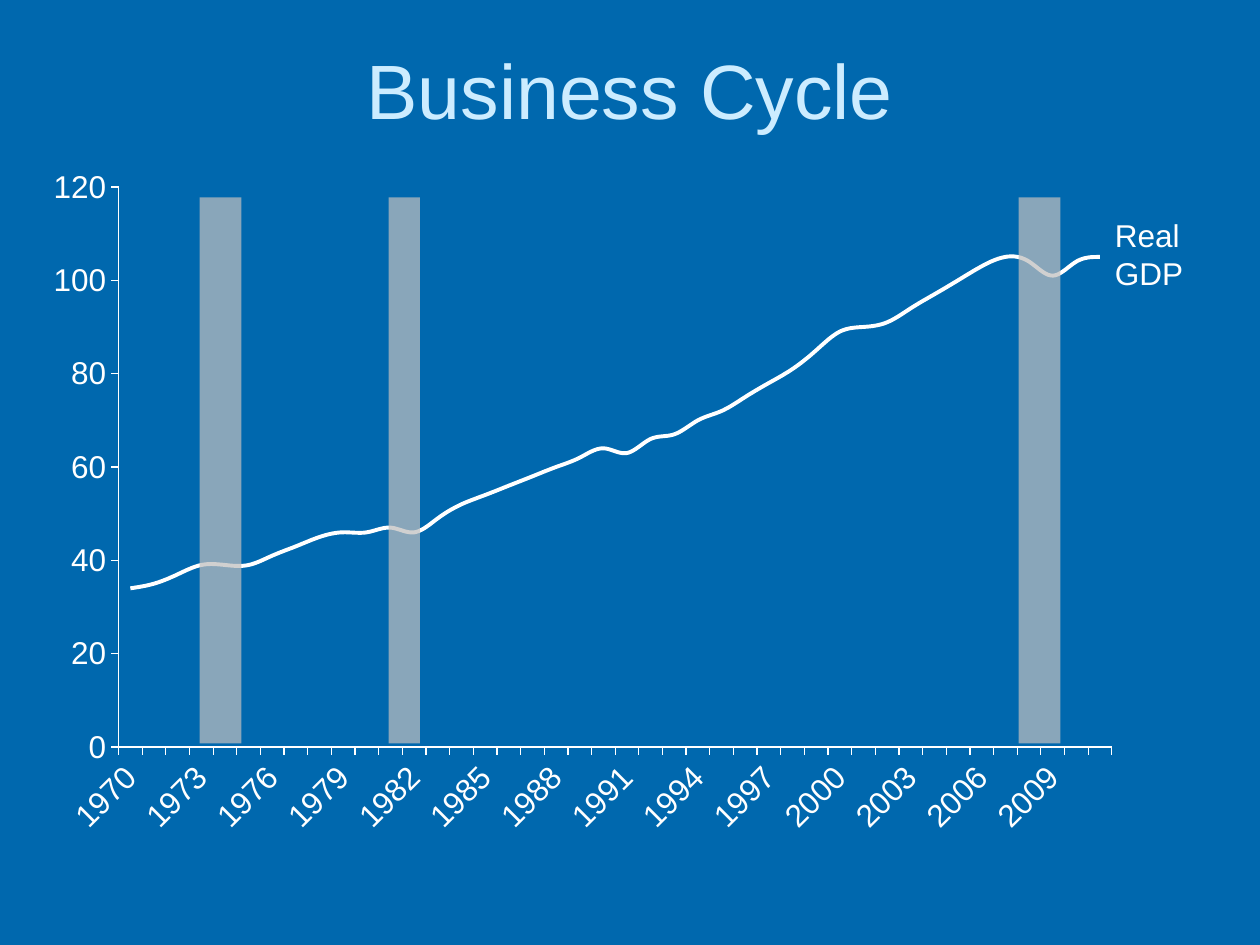
from lxml.etree import SubElement
from pptx import Presentation
from pptx.chart.data import CategoryChartData
from pptx.dml.color import RGBColor
from pptx.enum.chart import XL_CHART_TYPE, XL_MARKER_STYLE, XL_TICK_MARK
from pptx.enum.shapes import MSO_SHAPE
from pptx.enum.text import MSO_ANCHOR, PP_ALIGN
from pptx.oxml import parse_xml
from pptx.oxml.ns import nsdecls, qn
from pptx.util import Pt

FIRST_YEAR = 1970
REAL_GDP = [34, 35, 37, 39, 39, 39, 41, 43, 45, 46, 46, 47, 46, 49,
            52, 54, 56, 58, 60, 62, 64, 63, 66, 67, 70, 72, 75, 78,
            81, 85, 89, 90, 91, 94, 97, 100, 103, 105, 104, 101, 104, 105]
RECESSIONS = [(582, 24), (222, 18), (114, 24)]  # left, width
CHART_BOX = (18, 88.5, 630, 396)
PLOT_BOX = (67.75, 106.85, 567.65, 320.15)


def rgb(value):
    return RGBColor.from_string(value)


class Deck:
    font = "Arial"
    white = "FFFFFF"
    title_color = "CCECFF"
    band_color = "BFBFBF"
    background = "0068AE"

    def __init__(self, prs):
        self.s = prs.slides.add_slide(prs.slide_layouts[6])
        fill = self.s.background.fill
        fill.solid()
        fill.fore_color.rgb = rgb(self.background)

    def style_font(self, font, size, color):
        for name, value in {"name": self.font, "size": Pt(size)}.items():
            setattr(font, name, value)
        font.color.rgb = rgb(color)

    def text(self, text, box, size, color, align=PP_ALIGN.LEFT,
             anchor=MSO_ANCHOR.TOP):
        tf = self.s.shapes.add_textbox(*map(Pt, box)).text_frame
        for name, value in {"word_wrap": True, "vertical_anchor": anchor}.items():
            setattr(tf, name, value)
        p = tf.paragraphs[0]
        p.alignment = align
        r = p.add_run()
        r.text = text
        self.style_font(r.font, size, color)

    def band(self, left, top, width, height, opacity):
        sp = self.s.shapes.add_shape(
            MSO_SHAPE.RECTANGLE, *map(Pt, (left, top, width, height)))
        sp.shadow.inherit = False
        sp.line.fill.background()
        sp.fill.solid()
        sp.fill.fore_color.rgb = rgb(self.band_color)
        color = sp.fill._xPr.find(qn("a:solidFill"))[0]
        SubElement(color, qn("a:alpha"), val=str(opacity * 1000))

    def line_chart(self, box, plot_box, categories, name, values):
        data = CategoryChartData()
        data.categories = categories
        data.add_series(name, values)
        chart = self.s.shapes.add_chart(
            XL_CHART_TYPE.LINE, *map(Pt, box), data).chart
        for key, value in {"has_legend": False, "has_title": False}.items():
            setattr(chart, key, value)
        self.style_font(chart.font, 18, self.white)
        plot = chart.plots[0]
        plot.vary_by_categories = False
        series = plot.series[0]
        series.smooth = True
        series.marker.style = XL_MARKER_STYLE.NONE
        self.style_line(series.format.line, 2.25)
        for axis in (chart.category_axis, chart.value_axis):
            self.style_axis(axis)
        for key, value in {"minimum_scale": 0, "maximum_scale": 120,
                           "major_unit": 20}.items():
            setattr(chart.value_axis, key, value)
        self.slant_labels(chart.category_axis, 3)
        self.place_plot(chart, box, plot_box)

    def style_line(self, line, width):
        line.width = Pt(width)
        line.color.rgb = rgb(self.white)

    def style_axis(self, axis):
        for key, value in {"has_major_gridlines": False,
                           "major_tick_mark": XL_TICK_MARK.OUTSIDE,
                           "minor_tick_mark": XL_TICK_MARK.NONE}.items():
            setattr(axis, key, value)
        self.style_font(axis.tick_labels.font, 18, self.white)
        self.style_line(axis.format.line, 0.75)

    def slant_labels(self, axis, step):
        """Turn the labels by 45 degrees and show every step-th one."""
        ax = axis._element
        ax.find(qn("c:txPr")).find(qn("a:bodyPr")).set("rot", "-2700000")
        ax.find(qn("c:noMultiLvlLbl")).addprevious(
            parse_xml(f'<c:tickLblSkip {nsdecls("c")} val="{step}"/>'))

    def place_plot(self, chart, box, plot_box):
        """Fix the inner plot area, given on the slide, as shares of the chart."""
        area = chart._chartSpace.chart.plotArea
        for old in area.findall(qn("c:layout")):
            area.remove(old)
        layout = parse_xml(f'<c:layout {nsdecls("c")}><c:manualLayout>'
                           '<c:layoutTarget val="inner"/><c:xMode val="edge"/>'
                           '<c:yMode val="edge"/></c:manualLayout></c:layout>')
        left, top, width, height = box
        x, y, w, h = plot_box
        shares = {"x": (x - left) / width, "y": (y - top) / height,
                  "w": w / width, "h": h / height}
        for key, value in shares.items():
            SubElement(layout[0], qn(f"c:{key}"), val=f"{value:.5f}")
        area.insert(0, layout)


def main():
    prs = Presentation()
    prs.slide_width, prs.slide_height = Pt(720), Pt(540)
    deck = Deck(prs)
    deck.text("Business Cycle", (36, 5.5, 648, 90), 44, deck.title_color,
              PP_ALIGN.CENTER, MSO_ANCHOR.MIDDLE)
    years = [str(FIRST_YEAR + i) for i in range(len(REAL_GDP))]
    deck.line_chart(CHART_BOX, PLOT_BOX, years, "Series 1", REAL_GDP)
    for left, width in RECESSIONS:
        deck.band(left, 112.8, width, 312, 72)
    deck.text("Real GDP", (630, 120, 66, 51), 18, deck.white)
    prs.save("out.pptx")


if __name__ == "__main__":
    main()
